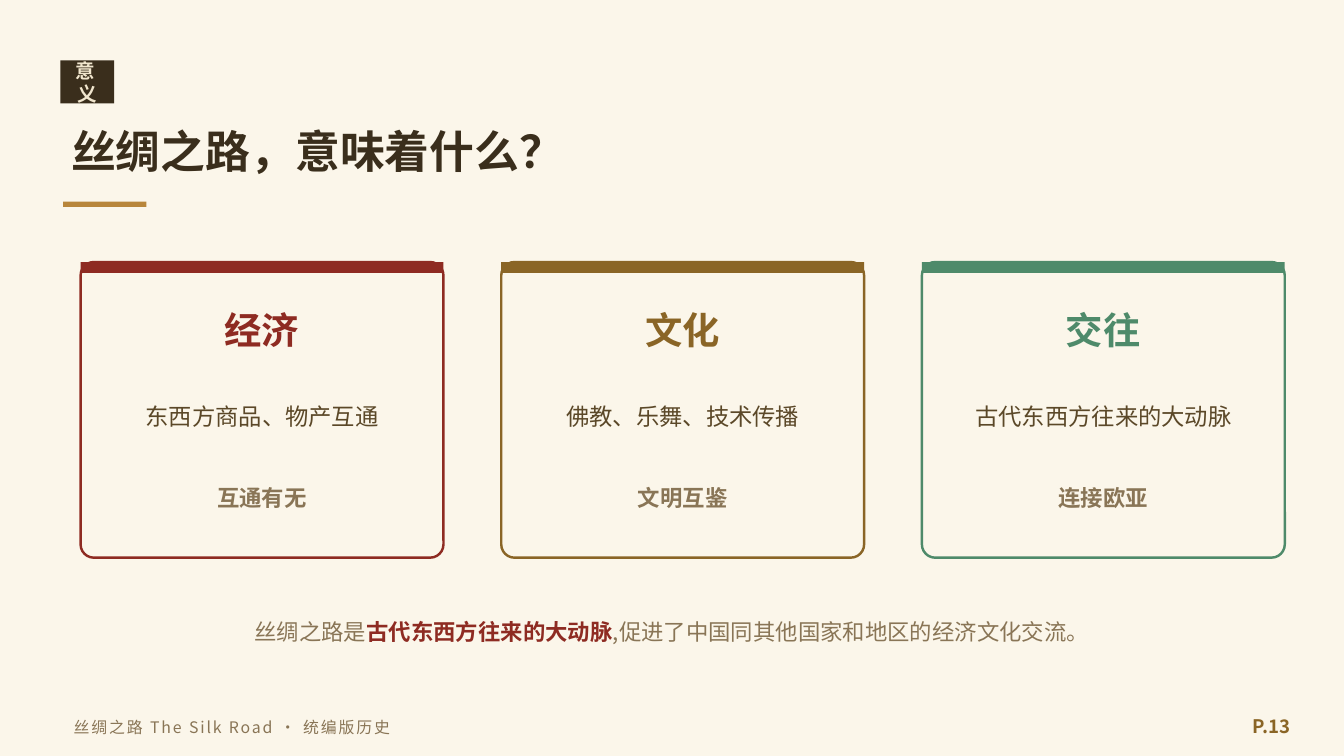
from lxml.etree import SubElement
from pptx import Presentation
from pptx.dml.color import RGBColor
from pptx.enum.shapes import MSO_SHAPE
from pptx.enum.text import MSO_ANCHOR, MSO_AUTO_SIZE, PP_ALIGN
from pptx.oxml.ns import qn
from pptx.util import Inches, Pt

THEME = {
    "font": "Noto Sans CJK SC",
    "paper": "FBF6EA", "ink": "3A2E1C", "cream": "F1E6CE", "gold": "B8863B",
    "body": "5B4828", "muted": "897556",
    "red": "8E2B22", "brown": "8A6526", "green": "4E8A6A",
    "sizes": {"tag": 10.5, "title": 24, "heading": 20, "detail": 12.5,
              "note": 12, "footer": 8.5, "page": 10},
}

TAG = "意义"
TITLE = "丝绸之路，意味着什么？"
CARDS = [
    ("经济", "东西方商品、物产互通", "互通有无", "red"),
    ("文化", "佛教、乐舞、技术传播", "文明互鉴", "brown"),
    ("交往", "古代东西方往来的大动脉", "连接欧亚", "green"),
]
SUMMARY = [
    ("丝绸之路是", "muted", False),
    ("古代东西方往来的大动脉", "red", True),
    (",促进了中国同其他国家和地区的经济文化交流。", "muted", False),
]
FOOTER = "丝绸之路 The Silk Road · 统编版历史"
PAGE = "P.13"

SLIDE_WIDTH = Inches(10)
SLIDE_HEIGHT = SLIDE_WIDTH * 9 // 16
CARD_LEFT, CARD_TOP, CARD_WIDTH, CARD_HEIGHT = 0.6, 1.95, 2.7, 2.2
CARD_STEP = 3.13
DETAIL_INSET = 0.15


def color(key):
    return RGBColor.from_string(THEME[key])


def add_block(slide, box, fill, line=None, preset=MSO_SHAPE.RECTANGLE):
    block = slide.shapes.add_shape(preset, *map(Inches, box))
    block.shadow.inherit = False
    block.fill.solid()
    block.fill.fore_color.rgb = color(fill)
    if line:
        block.line.color.rgb = color(line)
        block.line.width = Pt(1.3)
    else:
        block.line.fill.background()
    return block


def write(holder, runs, size, align=PP_ALIGN.CENTER, tracking=0, leading=None):
    frame = holder.text_frame
    frame.word_wrap = True
    frame.auto_size = MSO_AUTO_SIZE.NONE
    frame.vertical_anchor = MSO_ANCHOR.MIDDLE
    paragraph = frame.paragraphs[0]
    paragraph.alignment = align
    if leading:
        paragraph.line_spacing = Pt(leading)
    for words, tone, bold in runs:
        run = paragraph.add_run()
        run.text = words
        run.font.name = THEME["font"]
        run.font.size = Pt(THEME["sizes"][size])
        run.font.bold = bold
        run.font.color.rgb = color(tone)
        properties = run._r.get_or_add_rPr()
        SubElement(properties, qn("a:ea"), typeface=THEME["font"])
        if tracking:
            properties.set("spc", str(tracking * 100))


def add_text(slide, box, runs, size, **style):
    write(slide.shapes.add_textbox(*map(Inches, box)), runs, size, **style)


def add_card(slide, left, heading, detail, note, accent):
    card = add_block(slide, (left, CARD_TOP, CARD_WIDTH, CARD_HEIGHT),
                     "paper", accent, MSO_SHAPE.ROUNDED_RECTANGLE)
    card.adjustments[0] = 0.045
    add_block(slide, (left, CARD_TOP, CARD_WIDTH, 0.08), accent)
    add_text(slide, (left, 2.2, CARD_WIDTH, 0.5), [(heading, accent, True)], "heading")
    add_text(slide, (left + DETAIL_INSET, 2.78, CARD_WIDTH - 2 * DETAIL_INSET, 0.6),
             [(detail, "body", False)], "detail", leading=17)
    add_text(slide, (left, 3.5, CARD_WIDTH, 0.4), [(note, "muted", True)], "note")


def main():
    deck = Presentation()
    deck.slide_width, deck.slide_height = SLIDE_WIDTH, SLIDE_HEIGHT
    slide = deck.slides.add_slide(deck.slide_layouts[5])
    slide.background.fill.solid()
    slide.background.fill.fore_color.rgb = color("paper")

    add_block(slide, (0.45, 0.45, 0.4, 0.32), "ink")
    add_text(slide, (0.45, 0.44, 0.4, 0.34), [(TAG, "cream", True)], "tag", tracking=2)

    title = slide.shapes.title
    title.left, title.top, title.width, title.height = map(Inches, (0.43, 0.82, 9, 0.6))
    write(title, [(TITLE, "ink", True)], "title", align=PP_ALIGN.LEFT)
    add_block(slide, (0.47, 1.5, 0.62, 0.04), "gold")

    for index, card in enumerate(CARDS):
        add_card(slide, CARD_LEFT + index * CARD_STEP, *card)

    add_text(slide, (0.5, 4.45, 9, 0.5), SUMMARY, "note")
    add_text(slide, (0.45, 5.26, 6.8, 0.3), [(FOOTER, "muted", False)], "footer",
             align=PP_ALIGN.LEFT, tracking=1)
    add_text(slide, (9.1, 5.24, 0.6, 0.32), [(PAGE, "brown", True)], "page",
             align=PP_ALIGN.RIGHT)
    deck.save("out.pptx")


if __name__ == "__main__":
    main()
